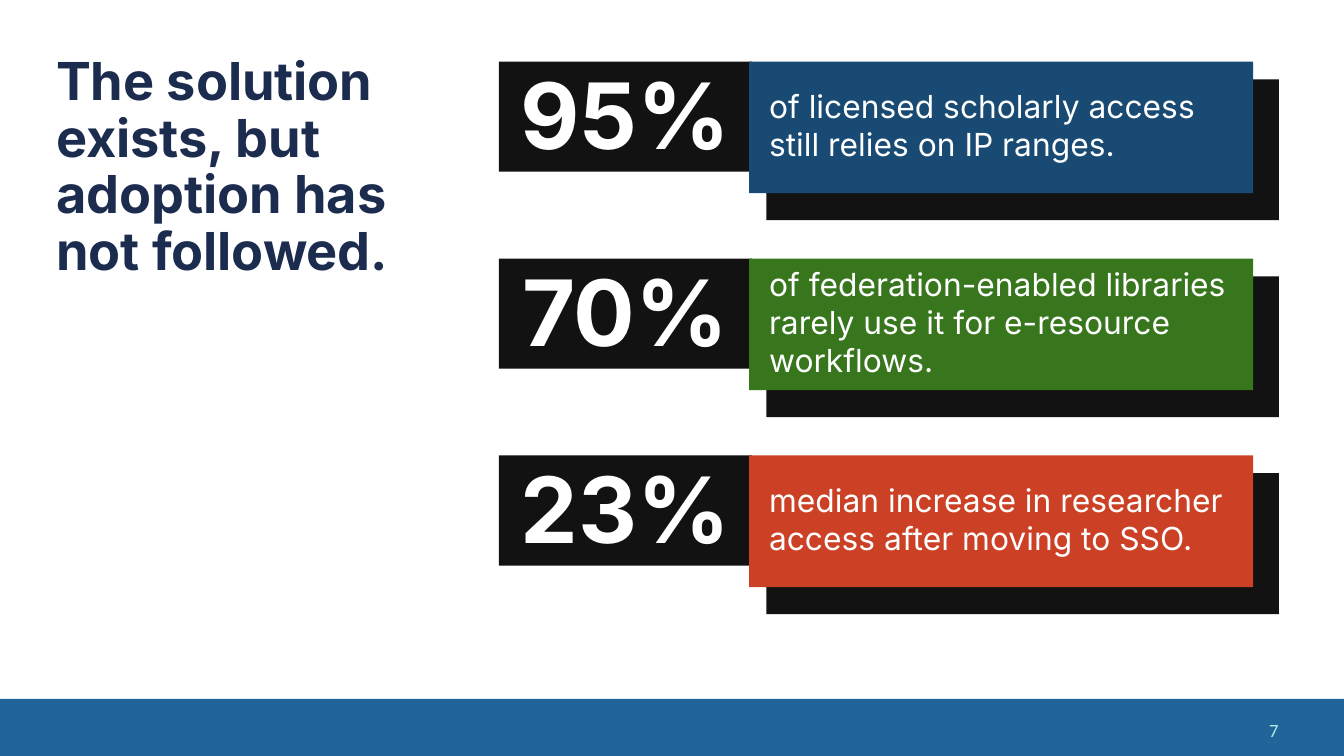
from pptx import Presentation
from pptx.dml.color import RGBColor
from pptx.enum.shapes import MSO_SHAPE as Shape
from pptx.enum.text import MSO_ANCHOR as Anchor, PP_ALIGN as Align
from pptx.util import Pt

INK = "121212"
WHITE = "FFFFFF"
BAND = "20649A"
STATS = [
    ("95%", "of licensed scholarly access still relies on IP ranges.", "184A73"),
    ("70%", "of federation-enabled libraries rarely use it for e-resource workflows.", "38761D"),
    ("23%", "median increase in researcher access after moving to SSO.", "CC4125"),
]


def color(code):
    """Turn a hex string into a colour."""
    return RGBColor.from_string(code)


def block(slide, x, y, w, h, fill):
    """Draw a plain filled rectangle."""
    shape = slide.shapes.add_shape(Shape.RECTANGLE, Pt(x), Pt(y), Pt(w), Pt(h))
    shape.shadow.inherit = False
    shape.fill.solid()
    shape.fill.fore_color.rgb = color(fill)
    shape.line.fill.background()
    return shape


def write(shape, text, size, ink=WHITE, font="Inter", bold=False,
          align=Align.LEFT, spacing=1.0, inset=(0, 0, 0, 0)):
    """Put formatted text into a shape."""
    frame = shape.text_frame
    frame.word_wrap = True
    frame.vertical_anchor = Anchor.MIDDLE
    frame.margin_left, frame.margin_top, frame.margin_right, frame.margin_bottom = map(Pt, inset)
    para = frame.paragraphs[0]
    para.text = text
    para.alignment = align
    para.line_spacing = spacing
    for run in para.runs:
        run.font.size = Pt(size)
        run.font.name = font
        run.font.bold = bold
        run.font.color.rgb = color(ink)


def label(slide, x, y, w, h, text, size, **style):
    """Add a text box."""
    write(slide.shapes.add_textbox(Pt(x), Pt(y), Pt(w), Pt(h)), text, size, **style)


def title(slide, x, y, w, h):
    """Place the slide title."""
    label(slide, x, y, w, h, "The solution exists, but adoption has \vnot followed.", 28,
          ink="1C2C4F", bold=True, spacing=0.9, inset=(7.2, 3.6, 7.2, 3.6))


def stat(slide, x, y, value, text, fill):
    """Place one figure with its offset caption panel."""
    write(block(slide, x, y, 135.5, 59, INK), value, 49, bold=True,
          align=Align.CENTER, spacing=0.8, inset=(0, 7, 0, 0))
    block(slide, x + 143.3, y + 9.5, 274.5, 75.5, INK)
    block(slide, x + 134, y, 270, 70.5, fill)
    label(slide, x + 144.7, y + 1.5, 252.7, 65, text, 17)


def footer(slide, x, y, w, h):
    """Place the bottom band and page number."""
    block(slide, x, y, w, h, BAND)
    label(slide, x + 530, y + 5.8, 162, 21.6, "7", 10, ink="B4E9E2", font="Calibri",
          align=Align.RIGHT, inset=(7.2, 3.6, 7.2, 3.6))


def main():
    """Build and save the slide."""
    deck = Presentation()
    deck.slide_width, deck.slide_height = Pt(720), Pt(405)
    slide = deck.slides.add_slide(deck.slide_layouts[6])
    footer(slide, 0, 374.4, 720, 30.6)
    title(slide, 23, 20.9, 244, 139)
    for row, (value, text, fill) in enumerate(STATS):
        stat(slide, 267.3, 33 + row * 105.5, value, text, fill)
    deck.save("out.pptx")


if __name__ == "__main__":
    main()
